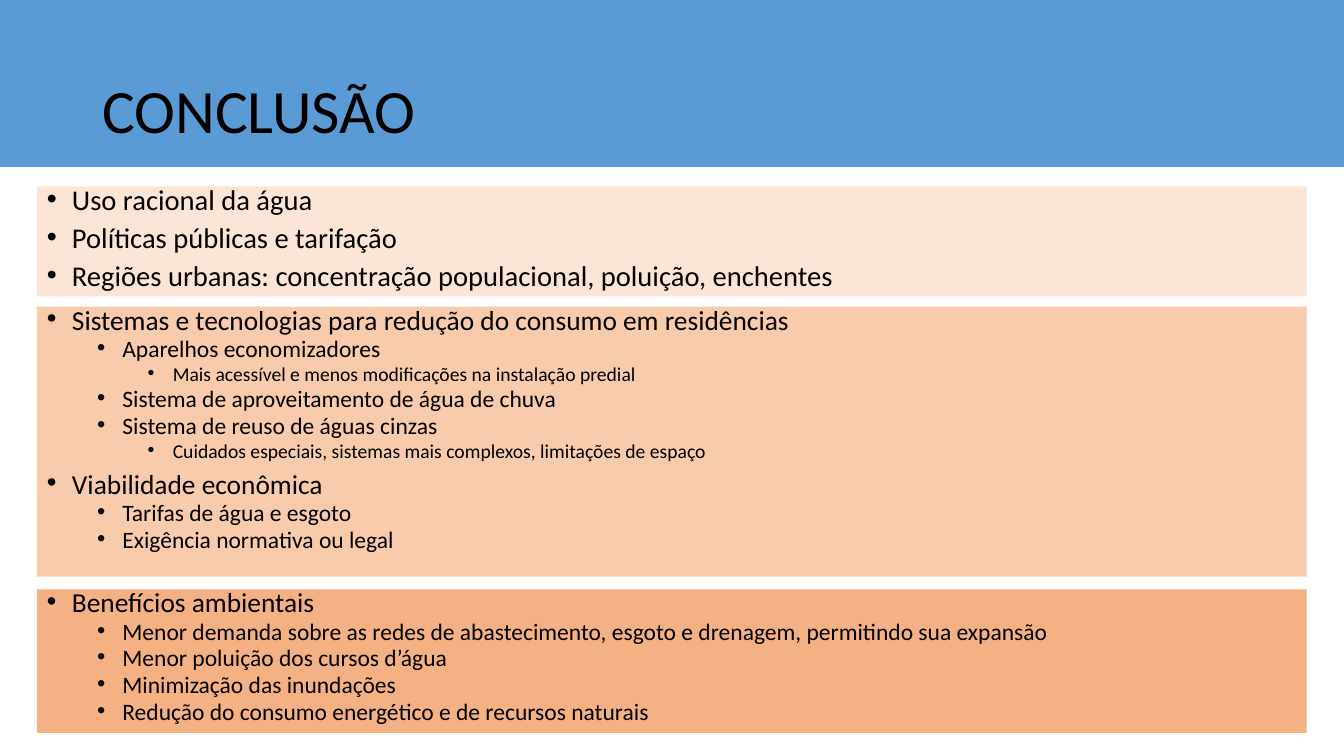
from pptx import Presentation
from pptx.dml.color import RGBColor
from pptx.enum import shapes, text
from pptx.oxml.ns import qn
from pptx.util import Cm, Pt
from lxml import etree

FONT = "Calibri"
COLOURS = {"banner": "5B9BD5", "light": "FBE5D6", "medium": "F8CBAD",
           "strong": "F4B183", "text": "000000"}
TITLE = "CONCLUSÃO"
PANELS = [
    ("light", 4.7, 2.77, (20.4,), [
        (0, "Uso racional da água"),
        (0, "Políticas públicas e tarifação"),
        (0, "Regiões urbanas: concentração populacional, poluição, enchentes"),
    ]),
    ("medium", 7.73, 6.8, (19.6, 16.8, 14), [
        (0, "Sistemas e tecnologias para redução do consumo em residências"),
        (1, "Aparelhos economizadores"),
        (2, "Mais acessível e menos modificações na instalação predial"),
        (1, "Sistema de aproveitamento de água de chuva"),
        (1, "Sistema de reuso de águas cinzas"),
        (2, "Cuidados especiais, sistemas mais complexos, limitações de espaço"),
        (0, "Viabilidade econômica"),
        (1, "Tarifas de água e esgoto"),
        (1, "Exigência normativa ou legal"),
    ]),
    ("strong", 14.85, 3.62, (19.6, 16.8), [
        (0, "Benefícios ambientais"),
        (1, "Menor demanda sobre as redes de abastecimento, esgoto e drenagem, permitindo sua expansão"),
        (1, "Menor poluição dos cursos d’água"),
        (1, "Minimização das inundações"),
        (1, "Redução do consumo energético e de recursos naturais"),
    ]),
]
PANEL_LEFT, PANEL_WIDTH = Cm(0.93), Cm(32.0)
HANG, LEVEL_STEP = Cm(0.635), Cm(1.27)


def colour(name):
    return RGBColor.from_string(COLOURS[name])


def add_rectangle(page, fill, left, top, width, height):
    box = page.shapes.add_shape(shapes.MSO_SHAPE.RECTANGLE, left, top, width, height)
    box.shadow.inherit = False
    box.fill.solid()
    box.fill.fore_color.rgb = colour(fill)
    box.line.fill.background()
    return box


def write(para, content, size, spacing):
    para.text = content
    para.alignment = text.PP_ALIGN.LEFT
    para.line_spacing = spacing
    for span in para.runs:
        span.font.name = FONT
        span.font.size = Pt(size)
        span.font.color.rgb = colour("text")


def add_bullet(para, level):
    para.level = level
    para.space_before = Pt(5 if level else 10)
    properties = para._p.get_or_add_pPr()
    properties.set("marL", str(HANG + level * LEVEL_STEP))
    properties.set("indent", str(-HANG))
    etree.SubElement(properties, qn("a:buFont"), typeface="Arial")
    etree.SubElement(properties, qn("a:buChar"), char="•")


def add_panel(page, fill, top, height, sizes, lines):
    box = add_rectangle(page, fill, PANEL_LEFT, Cm(top), PANEL_WIDTH, Cm(height))
    frame = box.text_frame
    frame.word_wrap = True
    frame.vertical_anchor = text.MSO_ANCHOR.TOP
    for index, (level, content) in enumerate(lines):
        para = frame.add_paragraph() if index else frame.paragraphs[0]
        write(para, content, sizes[level], 0.7)
        add_bullet(para, level)


def main():
    deck = Presentation()
    deck.slide_width, deck.slide_height = Cm(33.87), Cm(19.05)
    page = deck.slides.add_slide(deck.slide_layouts[6])

    banner = add_rectangle(page, "banner", 0, 0, deck.slide_width, Cm(4.2))
    banner.line.color.rgb = colour("banner")
    banner.line.width = Pt(1)

    heading = page.shapes.add_textbox(Cm(2.33), Cm(1.01), Cm(29.21), Cm(3.68))
    heading.text_frame.word_wrap = True
    heading.text_frame.vertical_anchor = text.MSO_ANCHOR.MIDDLE
    write(heading.text_frame.paragraphs[0], TITLE, 44, 0.9)

    for panel in PANELS:
        add_panel(page, *panel)
    deck.save("out.pptx")


if __name__ == "__main__":
    main()
